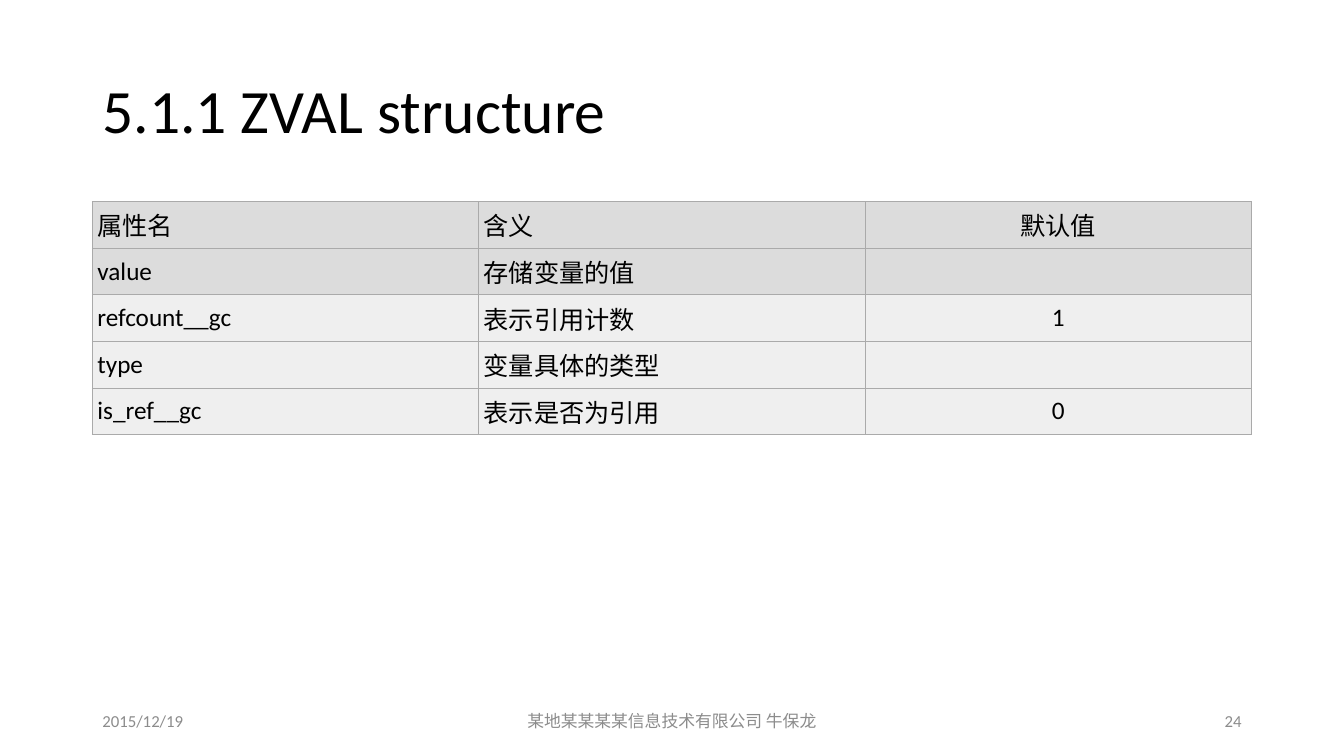
from dataclasses import dataclass

from lxml.etree import SubElement
from pptx import Presentation
from pptx.dml.color import RGBColor
from pptx.enum.text import MSO_ANCHOR, MSO_AUTO_SIZE, PP_ALIGN
from pptx.oxml.ns import qn
from pptx.util import Pt


@dataclass(frozen=True)
class Theme:
    font: str = "Calibri"
    text: str = "000000"
    muted: str = "8C8C8C"
    dark_row: str = "DCDCDC"
    light_row: str = "EFEFEF"
    border: str = "AAAAAA"
    title_size: int = 44
    table_size: int = 18
    footer_size: int = 12


theme = Theme()


def style_paragraph(paragraph, size, color, alignment):
    paragraph.alignment = alignment
    paragraph.font.name = theme.font
    paragraph.font.size = Pt(size)
    paragraph.font.color.rgb = RGBColor.from_string(color)


def add_borders(cell):
    """Draw all four edges; call before the fill, which must follow them in the XML."""
    properties = cell._tc.get_or_add_tcPr()
    for edge in ("a:lnL", "a:lnR", "a:lnT", "a:lnB"):
        line = SubElement(properties, qn(edge), w=str(Pt(0.75)))
        fill = SubElement(line, qn("a:solidFill"))
        SubElement(fill, qn("a:srgbClr"), val=theme.border)


presentation = Presentation()
presentation.slide_width = Pt(960)
presentation.slide_height = Pt(540)
slide = presentation.slides.add_slide(presentation.slide_layouts[5])

MARGIN = 66
CONTENT_WIDTH = 828

# Title
title = slide.shapes.title
title.left, title.top = Pt(MARGIN), Pt(28.75)
title.width, title.height = Pt(CONTENT_WIDTH), Pt(104.4)
title.text_frame.text = "5.1.1 ZVAL structure"
title.text_frame.auto_size = MSO_AUTO_SIZE.NONE
title.text_frame.vertical_anchor = MSO_ANCHOR.MIDDLE
title_paragraph = title.text_frame.paragraphs[0]
title_paragraph.line_spacing = 0.9
style_paragraph(title_paragraph, theme.title_size, theme.text, PP_ALIGN.LEFT)

# Table of structure members
members = [
    ("属性名", "含义", "默认值"),
    ("value", "存储变量的值", ""),
    ("refcount__gc", "表示引用计数", "1"),
    ("type", "变量具体的类型", ""),
    ("is_ref__gc", "表示是否为引用", "0"),
]
column_alignments = (PP_ALIGN.LEFT, PP_ALIGN.LEFT, PP_ALIGN.CENTER)
table = slide.shapes.add_table(
    len(members), len(column_alignments),
    Pt(MARGIN), Pt(144), Pt(CONTENT_WIDTH), Pt(145.5),
).table
table.first_row = False
table.horz_banding = False

for row_index, member in enumerate(members):
    row_color = theme.dark_row if row_index < 2 else theme.light_row
    for column_index, text in enumerate(member):
        cell = table.cell(row_index, column_index)
        add_borders(cell)
        cell.fill.solid()
        cell.fill.fore_color.rgb = RGBColor.from_string(row_color)
        cell.margin_left = cell.margin_right = Pt(3.6)
        cell.margin_top = cell.margin_bottom = Pt(3.6)
        cell.vertical_anchor = MSO_ANCHOR.MIDDLE
        cell.text = text
        style_paragraph(cell.text_frame.paragraphs[0], theme.table_size,
                        theme.text, column_alignments[column_index])

# Footer: date, presenter, slide number
footers = [
    ("2015/12/19", MARGIN, 216, PP_ALIGN.LEFT),
    ("某地某某某某信息技术有限公司 牛保龙", 318, 324, PP_ALIGN.CENTER),
    ("24", 678, 216, PP_ALIGN.RIGHT),
]
for text, left, width, alignment in footers:
    footer = slide.shapes.add_textbox(Pt(left), Pt(500.5), Pt(width), Pt(28.75))
    footer.text_frame.word_wrap = True
    footer.text_frame.vertical_anchor = MSO_ANCHOR.MIDDLE
    footer.text_frame.text = text
    style_paragraph(footer.text_frame.paragraphs[0], theme.footer_size,
                    theme.muted, alignment)

presentation.save("out.pptx")
